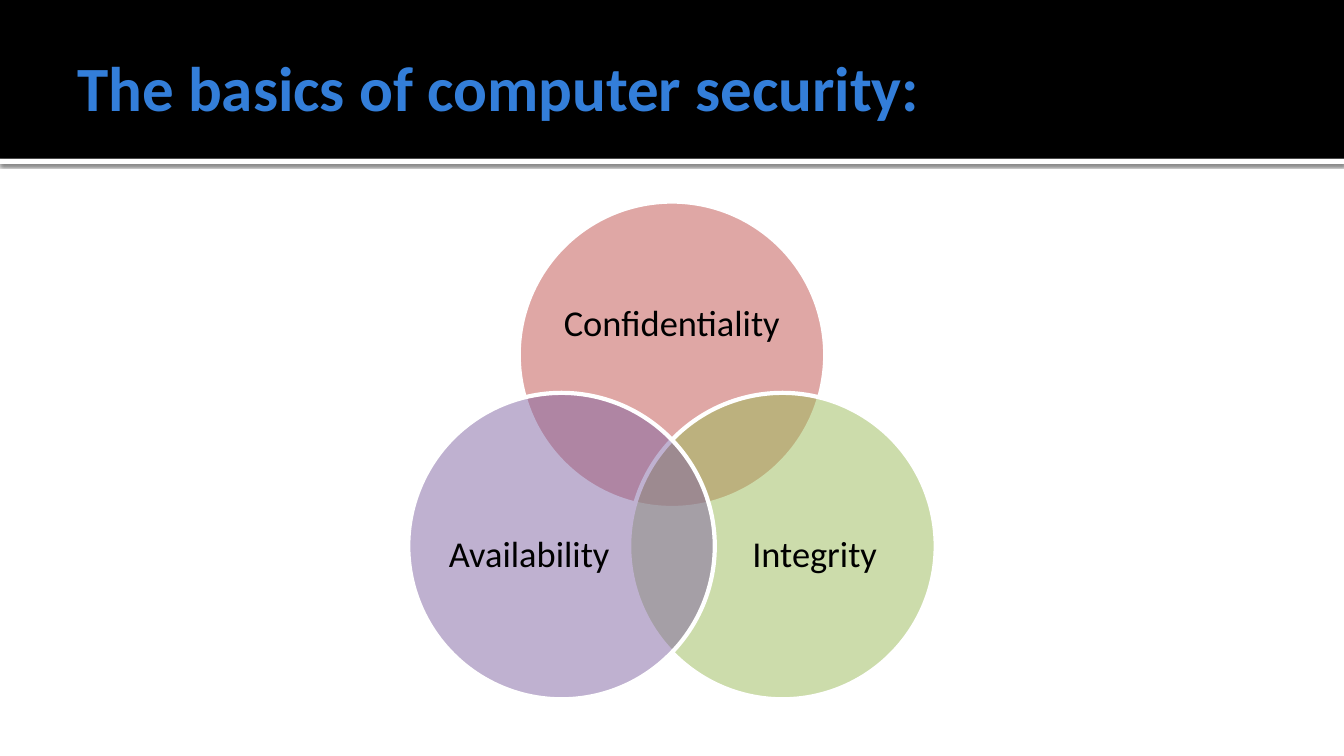
from math import cos, radians, sin

from lxml.etree import SubElement
from pptx import Presentation
from pptx.dml.color import RGBColor
from pptx.enum.shapes import MSO_SHAPE
from pptx.enum.text import MSO_ANCHOR, PP_ALIGN
from pptx.oxml.ns import qn
from pptx.util import Inches, Pt

WIDE, HIGH = 13.33, 7.5
MID, BAND = WIDE / 2, HIGH * 0.21
SIZE, REACH = 3.04, 1.265
HUB = 4.785


def color(code):
    return RGBColor.from_string(code)


def place(shape, left, top, wide, high):
    shape.left, shape.top = Inches(left), Inches(top)
    shape.width, shape.height = Inches(wide), Inches(high)


def write(shape, text, size=26, ink="000000", bold=False,
          align=PP_ALIGN.CENTER, space=0.9, inset=(0, 0, 0, 0)):
    frame = shape.text_frame
    frame.word_wrap = True
    frame.vertical_anchor = MSO_ANCHOR.MIDDLE
    (frame.margin_left, frame.margin_top,
     frame.margin_right, frame.margin_bottom) = map(Inches, inset)
    frame.text = text
    line = frame.paragraphs[0]
    line.alignment, line.line_spacing = align, space
    font = line.runs[0].font
    font.name, font.size, font.bold = "Calibri", Pt(size), bold
    font.color.rgb = color(ink)


def draw(slide, kind, box, fill):
    shape = slide.shapes.add_shape(kind, *map(Inches, box))
    shape.shadow.inherit = False
    shape.fill.solid()
    shape.fill.fore_color.rgb = color(fill)
    shape.line.fill.background()
    return shape


def fade(node, share):
    SubElement(node, qn("a:alpha"), val=str(share * 1000))


def shade(shape):
    effect = shape.element.spPr.find(qn("a:effectLst"))
    cast = SubElement(effect, qn("a:outerShdw"), blurRad=str(Pt(2.5)),
                      dist=str(Pt(0.8)), dir="5400000", rotWithShape="0")
    fade(SubElement(cast, qn("a:srgbClr"), val="000000"), 60)


def header(slide, text):
    shade(draw(slide, MSO_SHAPE.RECTANGLE, (0, BAND, WIDE, 0.05), "FFFFFF"))
    draw(slide, MSO_SHAPE.RECTANGLE, (0, 0, WIDE, BAND), "000000")
    title = slide.shapes.title
    slide.shapes.element.append(title.element)
    place(title, WIDE * 0.05, 0.17, WIDE * 0.9, 1.37)
    write(title, text, size=45, ink="337ED9", bold=True,
          align=PP_ALIGN.LEFT, space=1, inset=(0.1, 0.05, 0.05, 0.05))


def circle(slide, turn, fill, text, shift, area):
    x = MID + REACH * cos(radians(turn))
    y = HUB + REACH * sin(radians(turn))
    box = (x - SIZE / 2, y - SIZE / 2, SIZE, SIZE)
    disc = draw(slide, MSO_SHAPE.OVAL, box, fill)
    fade(disc.element.spPr.find(qn("a:solidFill"))[0], 50)
    disc.line.color.rgb = color("FFFFFF")
    disc.line.width = Pt(3)
    wide, high = area
    box = (x + shift[0] - wide / 2, y + shift[1] - high / 2, wide, high)
    write(slide.shapes.add_textbox(*map(Inches, box)), text)


def main():
    deck = Presentation()
    deck.slide_width, deck.slide_height = Inches(WIDE), Inches(HIGH)
    slide = deck.slides.add_slide(deck.slide_layouts[5])
    header(slide, "The basics of computer security:")
    circle(slide, -90, "C0504D", "Confidentiality", (0, -0.3), (2.23, 1.37))
    circle(slide, 30, "9BBB59", "Integrity", (0.32, 0.1), (1.82, 1.67))
    circle(slide, 150, "8064A2", "Availability", (-0.32, 0.1), (1.82, 1.67))
    deck.save("out.pptx")


if __name__ == "__main__":
    main()
